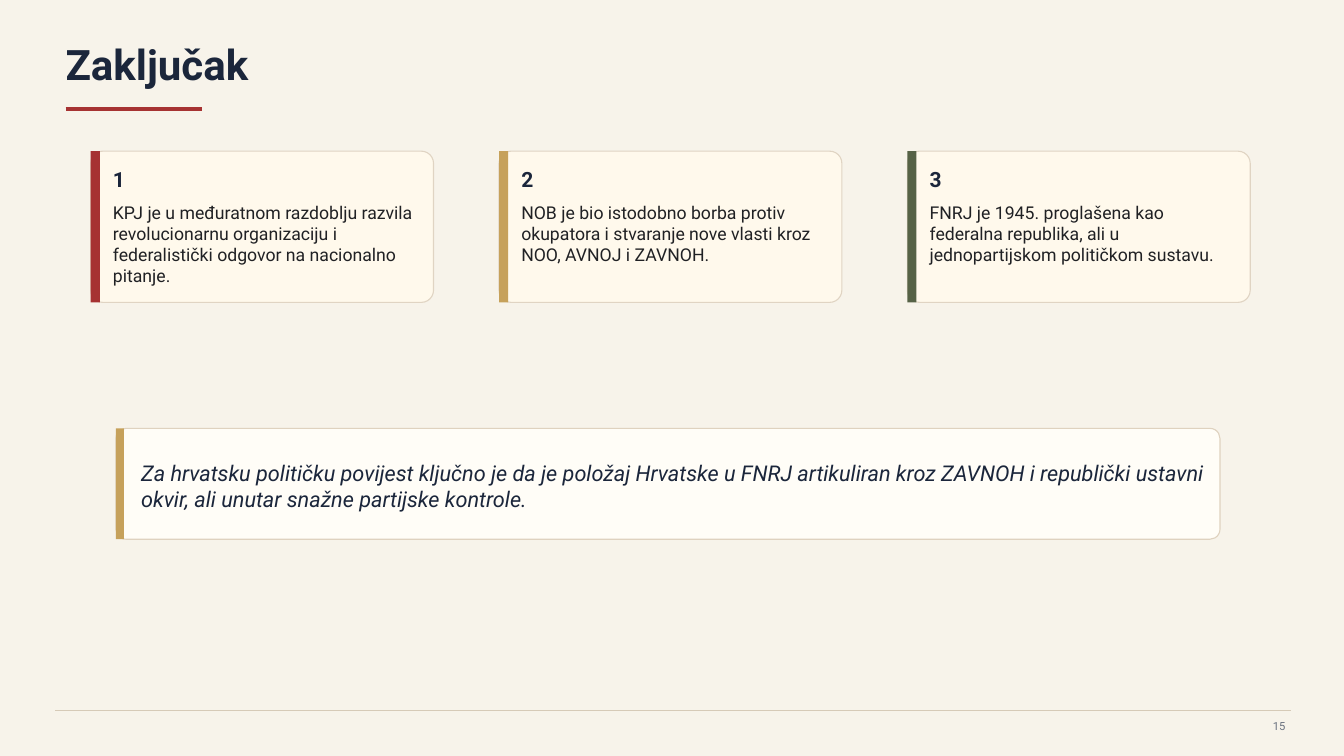
import lxml.etree
import pptx
import pptx.dml.color
import pptx.enum.shapes
import pptx.enum.text
import pptx.oxml.ns
import pptx.util

PX = 9144  # EMU per px, 100 px to the inch
NAVY, INK, GREY = "1B263B", "202124", "6B7280"
RED, GOLD, GREEN = "A63232", "C6A15B", "566246"
KIND = pptx.enum.shapes.MSO_SHAPE
ALIGN = pptx.enum.text.PP_ALIGN
ANCHOR = pptx.enum.text.MSO_ANCHOR

POINTS = [
    (RED, "KPJ je u međuratnom razdoblju razvila revolucionarnu organizaciju "
          "i federalistički odgovor na nacionalno pitanje."),
    (GOLD, "NOB je bio istodobno borba protiv okupatora i stvaranje nove "
           "vlasti kroz NOO, AVNOJ i ZAVNOH."),
    (GREEN, "FNRJ je 1945. proglašena kao federalna republika, ali u "
            "jednopartijskom političkom sustavu."),
]
QUOTE = ("Za hrvatsku političku povijest ključno je da je položaj Hrvatske u "
         "FNRJ artikuliran kroz ZAVNOH i republički ustavni okvir, ali unutar "
         "snažne partijske kontrole.")


def emu(*px):
    return [pptx.util.Emu(n * PX) for n in px]


def color(code):
    return pptx.dml.color.RGBColor.from_string(code)


def write(shape, text, size, ink=NAVY, bold=False, italic=False,
          align=ALIGN.LEFT, anchor=ANCHOR.MIDDLE):
    frame = shape.text_frame
    frame.word_wrap = True
    frame.auto_size = pptx.enum.text.MSO_AUTO_SIZE.NONE
    frame.vertical_anchor = anchor
    frame.margin_left = frame.margin_right = 0
    frame.margin_top = frame.margin_bottom = 0
    para = frame.paragraphs[0]
    para.alignment = align
    run = para.add_run()
    run.text = text
    font = run.font
    font.name = "Roboto"
    font.size = pptx.util.Pt(size)
    font.bold, font.italic = bold, italic
    font.color.rgb = color(ink)


class Deck:
    """Holds the page style and the current slide."""

    def __init__(self, back):
        self.file = pptx.Presentation()
        self.file.slide_width, self.file.slide_height = emu(1333, 750)
        self.slide = self.file.slides.add_slide(self.file.slide_layouts[5])
        fill = self.slide.background.fill
        fill.solid()
        fill.fore_color.rgb = color(back)

    def title(self, text, x, y, w, h):
        head = self.slide.shapes.title
        head.left, head.top, head.width, head.height = emu(x, y, w, h)
        write(head, text, 30, bold=True)

    def text(self, text, x, y, w, h, **style):
        box = self.slide.shapes.add_textbox(*emu(x, y, w, h))
        write(box, text, **style)

    def rule(self, x, y, w, ink, width):
        line = self.slide.shapes.add_connector(
            pptx.enum.shapes.MSO_CONNECTOR.STRAIGHT, *emu(x, y, x + w, y))
        line.line.color.rgb = color(ink)
        line.line.width = pptx.util.Pt(width)
        lxml.etree.SubElement(line.element.spPr,
                              pptx.oxml.ns.qn("a:effectLst"))

    def block(self, kind, x, y, w, h, fill, edge=None):
        shape = self.slide.shapes.add_shape(kind, *emu(x, y, w, h))
        shape.shadow.inherit = False
        shape.fill.solid()
        shape.fill.fore_color.rgb = color(fill)
        if edge:
            shape.line.color.rgb = color(edge)
            shape.line.width = pptx.util.Pt(0.8)
        else:
            shape.line.fill.background()
        return shape

    def panel(self, x, y, w, h, fill, edge, bar, accent, bend):
        """Rounded box with an accent bar on its left side."""
        box = self.block(KIND.ROUNDED_RECTANGLE, x, y, w, h, fill, edge)
        box.adjustments[0] = bend
        self.block(KIND.RECTANGLE, x, y, bar, h, accent)

    def card(self, x, y, label, text, accent):
        self.panel(x, y, 340, 150, "FFF9EC", "E0D4C3", 9, accent, 0.08)
        self.text(label, x + 22, y + 14, 305, 28, size=15, bold=True)
        self.text(text, x + 22, y + 50, 305, 88, size=12.6, ink=INK,
                  anchor=ANCHOR.TOP)

    def quote(self, text, x, y, w, h):
        self.panel(x, y, w, h, "FFFDF7", "DFD2BF", 8, GOLD, 0.09)
        self.text(text, x + 25, y + 14, w - 40, h - 25, size=15.5,
                  italic=True)

    def footer(self, number):
        self.rule(55, 705, 1225, "D6CAB7", 0.7)
        self.text(number, 1225, 710, 50, 20, size=8, ink=GREY,
                  align=ALIGN.RIGHT)


def main():
    deck = Deck("F7F3EA")
    deck.title("Zaključak", 65, 38, 840, 50)
    deck.rule(65, 108, 135, RED, 3)
    for i, (accent, text) in enumerate(POINTS):
        deck.card(90 + 405 * i, 150, str(i + 1), text, accent)
    deck.quote(QUOTE, 115, 425, 1095, 110)
    deck.footer("15")
    deck.file.save("out.pptx")


if __name__ == "__main__":
    main()
